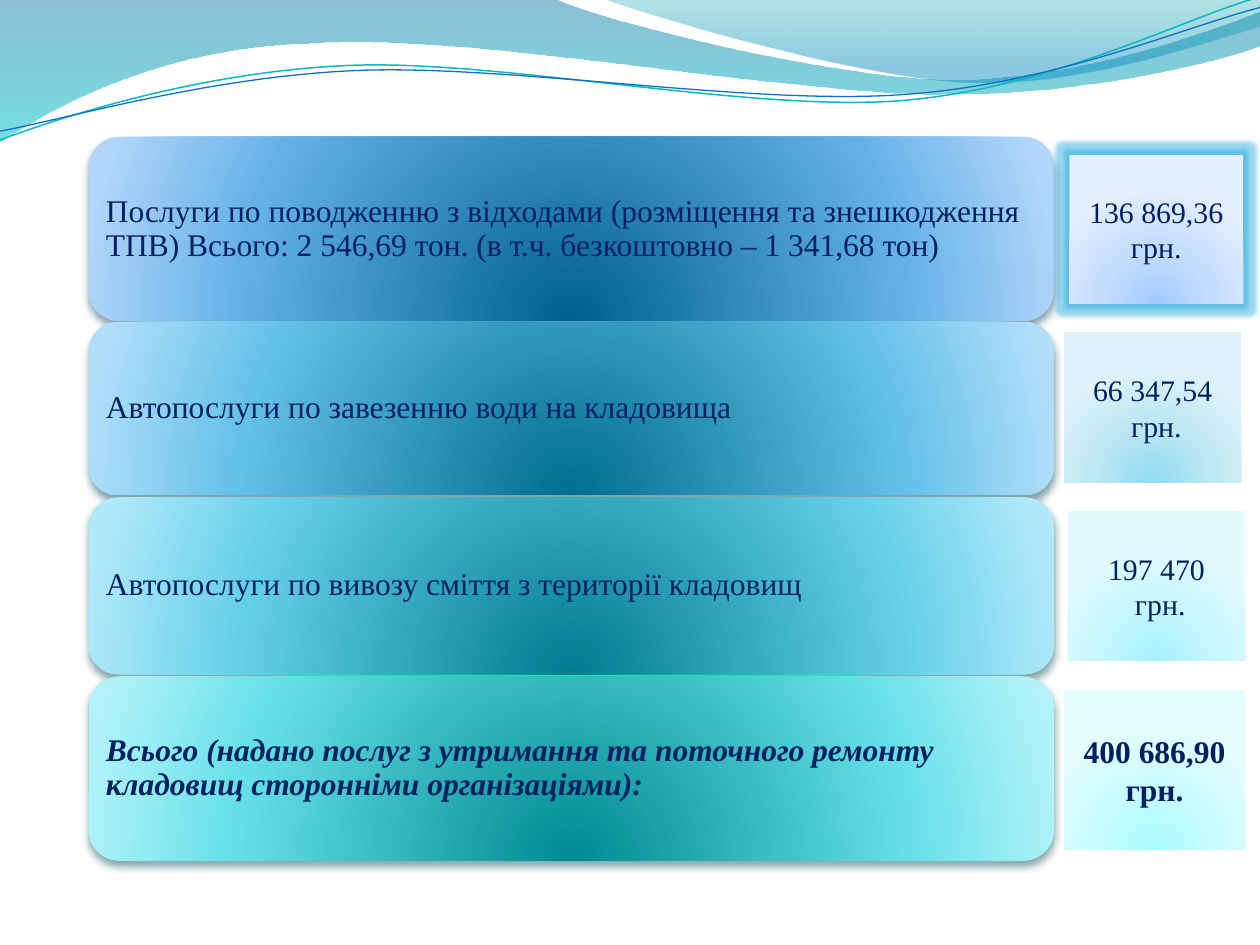
import math

import pptx
import pptx.util
import pptx.dml.color
import pptx.enum.shapes
import pptx.enum.text
import pptx.oxml.ns
from lxml import etree

Pt = pptx.util.Pt
FONT = "Times New Roman"
NAVY = "002060"
BAR_LEFT, BAR_WIDTH, BAR_INSET = 50.6, 551.7, 5
TILT = 2.7

BARS = [
    (78.2, 105.1, ("006091", "64B1E7", "B1D6F9"), "00374C", False,
     "Послуги по поводженню з відходами (розміщення та знешкодження ТПВ) "
     "Всього: 2 546,69 тон. (в т.ч. безкоштовно – 1 341,68 тон)"),
    (183.9, 98.9, ("006E91", "64C0E8", "B1DFF9"), "003E4D", False,
     "Автопослуги по завезенню води на кладовища"),
    (284.2, 101, ("007C91", "64D0E8", "B1E9F9"), "01454E", False,
     "Автопослуги по вивозу сміття з території кладовищ"),
    (386.6, 105.1, ("008A91", "64DFE7", "B1F3F9"), "024B4E", True,
     "Всього (надано послуг з утримання та поточного ремонту кладовищ "
     "сторонніми організаціями):"),
]

AMOUNTS = [
    ((611, 88.4, 99.4, 85), ("A3CBFF", "C6DDFF", "E3EEFF"), 17, False, ["136 869,36 грн."]),
    ((608.1, 190, 101.2, 85.9), ("8FDBEF", "BCE7F3", "DEF2F9"), 17, False, ["66 347,54", " грн."]),
    ((610.3, 292, 101.2, 85.7), ("A6F1FF", "C7F6FF", "E3FAFF"), 17, False, ["197 470", " грн."]),
    ((608.1, 394.2, 103.4, 91.4), ("A7FAFF", "C9FCFF", "E4FDFF"), 18, True, ["400 686,90", "грн."]),
]

WAVES = [
    ((0, 0), [(317, -0.7), (343, 12, 478, 45.4, 546, 45.4), (614, 45.4, 690, 18.7, 720, 6.5),
              (720.7, 26), (708, 31.7, 626, 54.7, 537, 54), (448, 54, 275, 20, 185, 24.5),
              (93, 26, 33, 60, -0.7, 81.4), (0, 0)],
     [(0, "0074A1", 45), (100, "00C6CF", 55)]),
    ((345, -0.7), [(366.5, 8, 491, 44.6, 553.7, 46.8), (616.3, 49.7, 692, 23, 720, 15),
                   (720, 0), (345, -0.7)],
     [(0, "00A1A9", 30), (80, "008BBF", 45)]),
]

SWOOSHES = [
    ((0, 80), [(34.6, 67, 113.8, 41, 199.4, 37.4), (284.4, 33.8, 427, 64, 513.4, 57.6),
               (599.8, 51, 675.4, 10.8, 718.6, -1.4)], (359.3, 41.4), "0AB8BF", 0.85),
    ((0, 74.9), [(33.8, 69.1, 118, 43.9, 203.8, 40.3), (290.2, 36.7, 429.8, 60.5, 516.2, 54),
                 (601.9, 48.2, 677.5, 15.1, 720, 4.3)], (359.6, 42.5), "0F6FC6", 0.75),
]


def color(value):
    return pptx.dml.color.RGBColor.from_string(value)


def add_element(parent, tag, **attributes):
    values = {name: str(value) for name, value in attributes.items()}
    return etree.SubElement(parent, pptx.oxml.ns.qn(tag), values)


def add_color(parent, value, opacity):
    element = add_element(parent, "a:srgbClr", val=value)
    if opacity < 100:
        add_element(element, "a:alpha", val=opacity * 1000)


def fill_gradient(shape, stops, radial):
    shape.fill.background()
    empty_fill = shape._element.spPr.find(pptx.oxml.ns.qn("a:noFill"))
    gradient = etree.Element(pptx.oxml.ns.qn("a:gradFill"), rotWithShape="1")
    stop_list = add_element(gradient, "a:gsLst")
    for position, value, opacity in stops:
        add_color(add_element(stop_list, "a:gs", pos=position * 1000), value, opacity)
    if radial:
        circle = add_element(gradient, "a:path", path="circle")
        add_element(circle, "a:fillToRect", l=50000, t=130000, r=50000, b=-30000)
    else:
        add_element(gradient, "a:lin", ang=5400000, scaled=1)
    empty_fill.getparent().replace(empty_fill, gradient)


def add_effect(shape, tag, value, opacity, **attributes):
    effects = shape._element.spPr.find(pptx.oxml.ns.qn("a:effectLst"))
    add_color(add_element(effects, tag, **attributes), value, opacity)


def points_of(segment):
    return list(zip(segment[::2], segment[1::2]))


def turn(point, center, degrees):
    angle = math.radians(degrees)
    x, y = point[0] - center[0], point[1] - center[1]
    return (center[0] + x * math.cos(angle) - y * math.sin(angle),
            center[1] + x * math.sin(angle) + y * math.cos(angle))


def add_outline(slide, start, segments, closed):
    ends = [segment[-2:] for segment in segments]
    builder = slide.shapes.build_freeform(Pt(start[0]), Pt(start[1]))
    builder.add_line_segments([(Pt(x), Pt(y)) for x, y in ends], close=closed)
    shape = builder.convert_to_shape()
    shape.shadow.inherit = False
    lines = list(shape._element.spPr.iter(pptx.oxml.ns.qn("a:lnTo")))
    for line, segment in zip(lines, segments):
        if len(segment) == 6:
            curve = etree.Element(pptx.oxml.ns.qn("a:cubicBezTo"))
            for x, y in points_of(segment):
                add_element(curve, "a:pt", x=Pt(x) - shape.left, y=Pt(y) - shape.top)
            line.getparent().replace(line, curve)
    return shape


def add_wave(slide, start, segments, stops):
    shape = add_outline(slide, start, segments, True)
    fill_gradient(shape, stops, False)
    shape.line.fill.background()


def add_swoosh(slide, start, segments, center, value, width):
    level = [sum((turn(point, center, TILT) for point in points_of(segment)), ())
             for segment in segments]
    shape = add_outline(slide, turn(start, center, TILT), level, False)
    shape.rotation = 360 - TILT
    shape.fill.background()
    shape.line.color.rgb = color(value)
    shape.line.width = Pt(width)


def add_panel(slide, kind, box, colors, middle):
    shape = slide.shapes.add_shape(kind, *map(Pt, box))
    shape.shadow.inherit = False
    shape.line.fill.background()
    fill_gradient(shape, [(position, value, 100) for position, value in zip((0, middle, 100), colors)], True)
    return shape


def write_text(shape, lines, size, alignment, bold=False, italic=False, spacing=None):
    frame = shape.text_frame
    frame.word_wrap = True
    frame.vertical_anchor = pptx.enum.text.MSO_ANCHOR.MIDDLE
    for index, line in enumerate(lines):
        paragraph = frame.add_paragraph() if index else frame.paragraphs[0]
        paragraph.alignment = alignment
        if spacing:
            paragraph.line_spacing = spacing
        run = paragraph.add_run()
        run.text = line
        run.font.name = FONT
        run.font.size = Pt(size)
        run.font.bold = bold
        run.font.italic = italic
        run.font.color.rgb = color(NAVY)


def add_bar(slide, top, height, colors, shadow, emphasis, text):
    kind = pptx.enum.shapes.MSO_SHAPE.ROUNDED_RECTANGLE
    bar = add_panel(slide, kind, (BAR_LEFT, top, BAR_WIDTH, height), colors, 68)
    add_effect(bar, "a:outerShdw", shadow, 48, blurRad=Pt(4.5), dist=Pt(3), dir=5400000, rotWithShape=0)
    label = slide.shapes.add_textbox(Pt(BAR_LEFT + BAR_INSET), Pt(top + BAR_INSET),
                                     Pt(BAR_WIDTH - 2 * BAR_INSET), Pt(height - 2 * BAR_INSET))
    frame = label.text_frame
    frame.margin_left = frame.margin_right = frame.margin_top = frame.margin_bottom = Pt(5)
    write_text(label, [text], 18, pptx.enum.text.PP_ALIGN.LEFT, emphasis, emphasis, 0.9)


def add_amount(slide, box, colors, size, bold, lines):
    shape = add_panel(slide, pptx.enum.shapes.MSO_SHAPE.RECTANGLE, box, colors, 50)
    write_text(shape, lines, size, pptx.enum.text.PP_ALIGN.CENTER, bold)
    return shape


def main():
    presentation = pptx.Presentation()
    presentation.slide_width, presentation.slide_height = Pt(720), Pt(540)
    slide = presentation.slides.add_slide(presentation.slide_layouts[6])
    for wave in WAVES:
        add_wave(slide, *wave)
    for swoosh in SWOOSHES:
        add_swoosh(slide, *swoosh)
    for bar in BARS:
        add_bar(slide, *bar)
    amounts = [add_amount(slide, *amount) for amount in AMOUNTS]
    add_effect(amounts[0], "a:glow", "009DD9", 40, rad=Pt(5))
    presentation.save("out.pptx")


if __name__ == "__main__":
    main()
